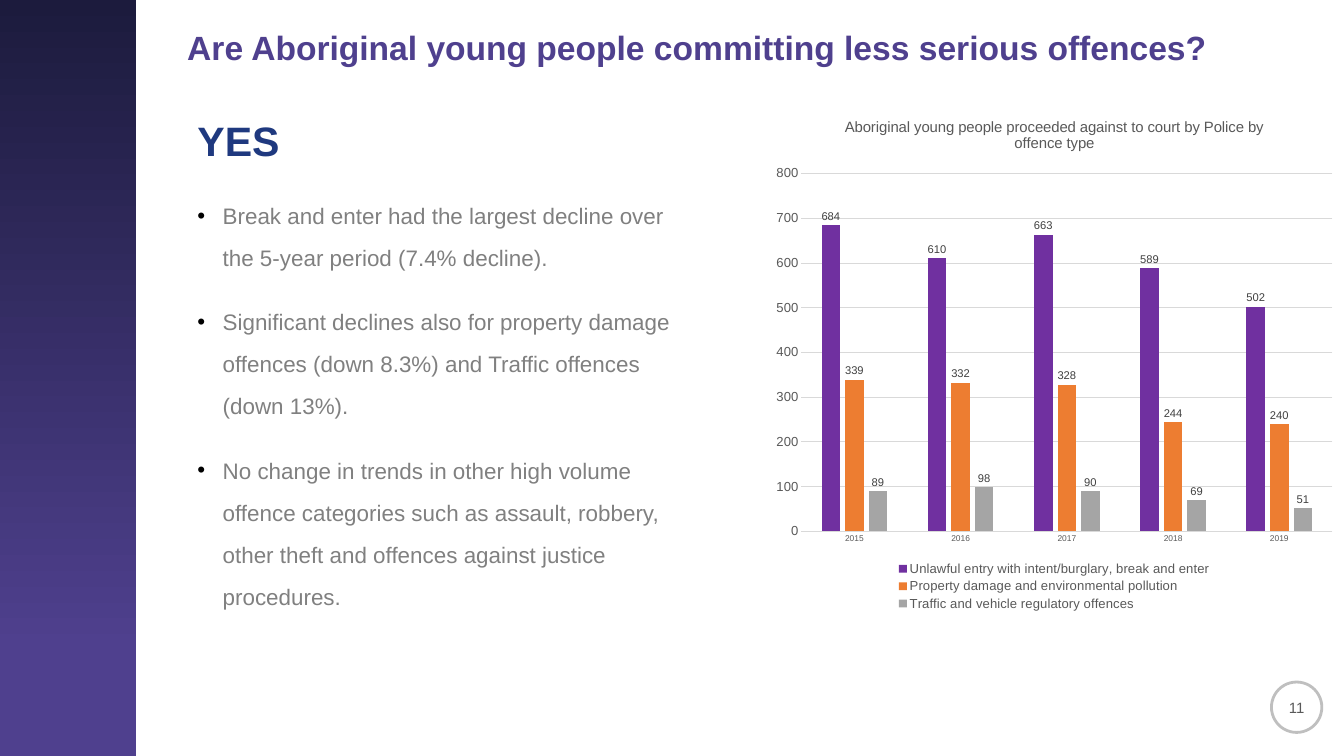
from typing import NamedTuple

from lxml.etree import SubElement
from pptx import Presentation
from pptx.chart.data import CategoryChartData
from pptx.dml.color import RGBColor
from pptx.enum.chart import XL_CHART_TYPE, XL_LABEL_POSITION, XL_LEGEND_POSITION, XL_TICK_MARK
from pptx.enum.shapes import MSO_SHAPE
from pptx.enum.text import MSO_ANCHOR, PP_ALIGN
from pptx.oxml.ns import qn
from pptx.util import Pt

FONT = "Arial"
PURPLE, DARK_GREY, GRID_GREY = "4F408E", "595959", "D9D9D9"
INDENT = 27


class Area(NamedTuple):
    left: float
    top: float
    width: float
    height: float

    def lengths(self) -> list:
        return [Pt(value) for value in self]


class Offence(NamedTuple):
    name: str
    counts: tuple
    color: str


YEARS = ("2015", "2016", "2017", "2018", "2019")
OFFENCES = (
    Offence("Unlawful entry with intent/burglary, break and enter", (684, 610, 663, 589, 502), "7030A0"),
    Offence("Property damage and environmental pollution", (339, 332, 328, 244, 240), "ED7D31"),
    Offence("Traffic and vehicle regulatory offences", (89, 98, 90, 69, 51), "A5A5A5"),
)
FINDINGS = (
    "Break and enter had the largest decline over the 5-year period (7.4% decline).",
    "Significant declines also for property damage offences (down 8.3%) and Traffic offences (down 13%).",
    "No change in trends in other high volume offence categories such as assault, robbery, "
    "other theft and offences against justice procedures.",
)


def rgb(value: str) -> RGBColor:
    return RGBColor.from_string(value)


def set_font(font, size: float, color: str, bold: bool = False) -> None:
    font.name = FONT
    font.size = Pt(size)
    font.bold = bold
    font.color.rgb = rgb(color)


def add_text_box(page, area: Area):
    frame = page.shapes.add_textbox(*area.lengths()).text_frame
    frame.word_wrap = True
    return frame


def write_para(para, text: str, size: float, color: str, bold: bool = False) -> None:
    para.text = text
    para.line_spacing = Pt(45)
    para.space_before = para.space_after = Pt(12)
    set_font(para.font, size, color, bold)


def add_bullet(para) -> None:
    properties = para._p.get_or_add_pPr()
    properties.set("marL", str(Pt(INDENT)))
    properties.set("indent", str(-Pt(INDENT)))
    bullet_color = SubElement(properties, qn("a:buClr"))
    SubElement(bullet_color, qn("a:srgbClr"), val="000000")
    SubElement(properties, qn("a:buFont"), typeface=FONT)
    SubElement(properties, qn("a:buChar"), char="•")
    default_run = properties.find(qn("a:defRPr"))
    if default_run is not None:
        properties.append(default_run)


def add_side_band(page) -> None:
    band = page.shapes.add_shape(MSO_SHAPE.RECTANGLE, *Area(0, 0, 145.5, 810).lengths())
    band.shadow.inherit = False
    band.line.fill.background()
    band.fill.gradient()
    band.fill.gradient_angle = 270
    for stop, position, color in zip(band.fill.gradient_stops, (0, 0.86), ("1C1B3D", PURPLE)):
        stop.position = position
        stop.color.rgb = rgb(color)


def add_page_number(page, number: str) -> None:
    badge = page.shapes.add_shape(MSO_SHAPE.OVAL, *Area(1362.25, 730.75, 54, 54).lengths())
    badge.shadow.inherit = False
    badge.fill.solid()
    badge.fill.fore_color.rgb = rgb("FFFFFF")
    badge.line.color.rgb = rgb("BFBFBF")
    badge.line.width = Pt(3)
    frame = badge.text_frame
    frame.margin_left = frame.margin_right = 0
    frame.vertical_anchor = MSO_ANCHOR.MIDDLE
    para = frame.paragraphs[0]
    para.text = number
    para.alignment = PP_ALIGN.CENTER
    set_font(para.font, 16, DARK_GREY)


def add_findings(page) -> None:
    frame = add_text_box(page, Area(204.5, 127.5, 535, 635))
    write_para(frame.paragraphs[0], "YES", 44, "1F397F", True)
    for finding in FINDINGS:
        para = frame.add_paragraph()
        write_para(para, finding, 24, "808080")
        add_bullet(para)


def style_axis(axis, size: float) -> None:
    axis.major_tick_mark = axis.minor_tick_mark = XL_TICK_MARK.NONE
    set_font(axis.tick_labels.font, size, DARK_GREY)


def style_line(line) -> None:
    line.color.rgb = rgb(GRID_GREY)
    line.width = Pt(0.75)


def add_offence_chart(page) -> None:
    data = CategoryChartData()
    data.categories = YEARS
    for offence in OFFENCES:
        data.add_series(offence.name, offence.counts)
    area = Area(819.5, 108, 620.5, 549.5)
    chart = page.shapes.add_chart(XL_CHART_TYPE.COLUMN_CLUSTERED, *area.lengths(), data).chart
    set_font(chart.font, 10, "000000")

    chart.has_title = True
    title = chart.chart_title
    title.include_in_layout = False
    para = title.text_frame.paragraphs[0]
    para.text = "Aboriginal young people proceeded against to court by Police by offence type"
    set_font(para.font, 16, DARK_GREY)

    chart.has_legend = True
    chart.legend.position = XL_LEGEND_POSITION.BOTTOM
    chart.legend.include_in_layout = False
    set_font(chart.legend.font, 14, DARK_GREY)

    style_axis(chart.category_axis, 9)
    style_line(chart.category_axis.format.line)
    counts_axis = chart.value_axis
    style_axis(counts_axis, 14)
    counts_axis.minimum_scale, counts_axis.maximum_scale, counts_axis.major_unit = 0, 800, 100
    counts_axis.format.line.fill.background()
    style_line(counts_axis.major_gridlines.format.line)

    plot = chart.plots[0]
    plot.vary_by_categories = False
    plot.gap_width, plot.overlap = 219, -27
    for series, offence in zip(plot.series, OFFENCES):
        series.format.fill.solid()
        series.format.fill.fore_color.rgb = rgb(offence.color)
        labels = series.data_labels
        labels.show_value = True
        labels.position = XL_LABEL_POSITION.OUTSIDE_END
        set_font(labels.font, 12, "404040")


def main() -> None:
    deck = Presentation()
    deck.slide_width, deck.slide_height = Pt(1440), Pt(810)
    page = deck.slides.add_slide(deck.slide_layouts[6])
    add_side_band(page)
    add_page_number(page, "11")
    heading = add_text_box(page, Area(193.5, 24, 1207.5, 47.5))
    question = "Are Aboriginal young people committing less serious offences?"
    write_para(heading.paragraphs[0], question, 36, PURPLE, True)
    add_findings(page)
    add_offence_chart(page)
    deck.save("out.pptx")


if __name__ == "__main__":
    main()
